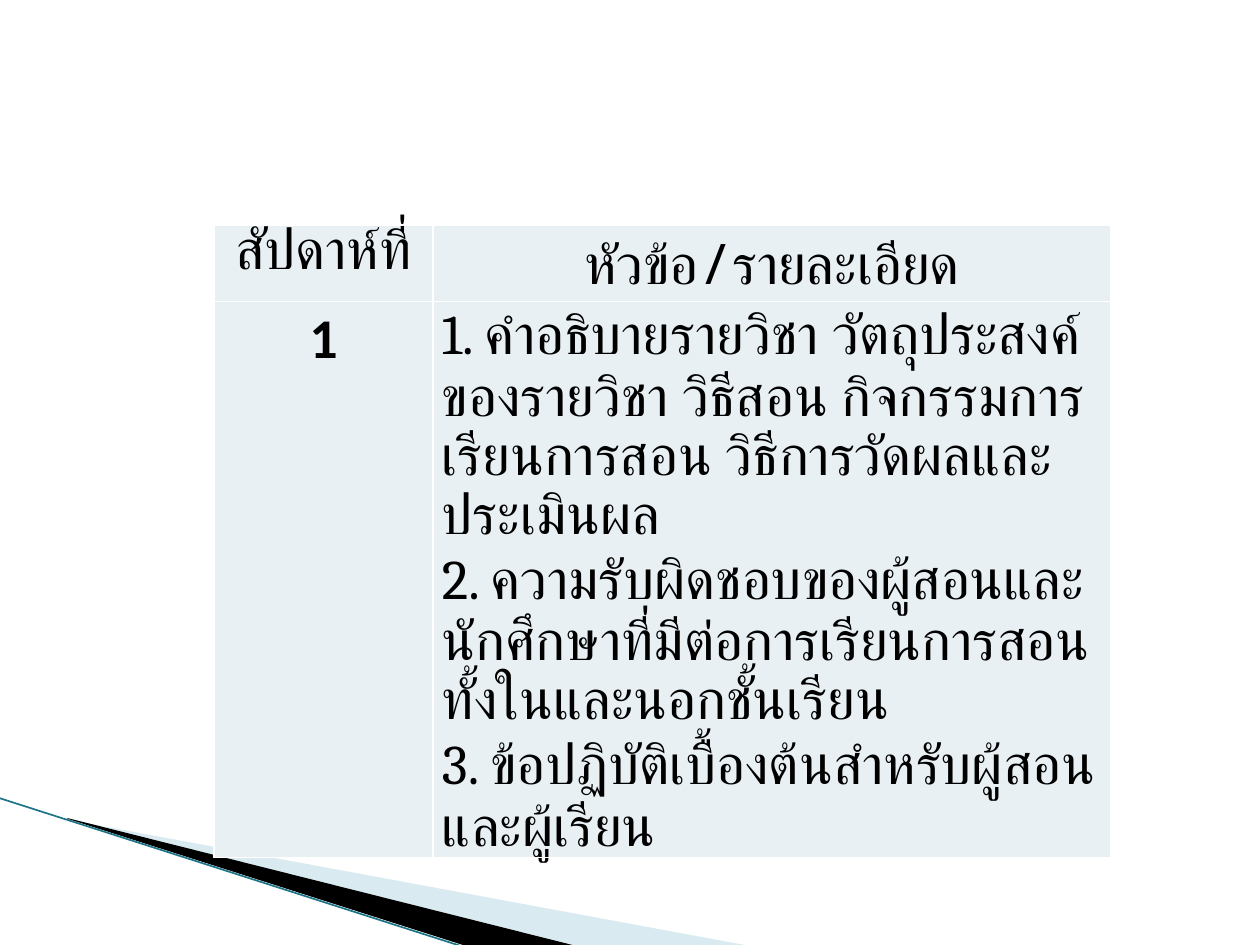
from lxml import etree
from pptx import Presentation, util as u
from pptx.dml.color import RGBColor
from pptx.enum import shapes, text
from pptx.oxml.ns import qn

SCALE = 914400 / 126  # EMU per px

HEADINGS = ["สัปดาห์ที่", "หัวข้อ/รายละเอียด"]
WEEK = ["1"]
TOPICS = [
    "1. คำอธิบายรายวิชา วัตถุประสงค์ของรายวิชา วิธีสอน กิจกรรมการเรียนการสอน วิธีการวัดผลและประเมินผล",
    "2. ความรับผิดชอบของผู้สอนและนักศึกษาที่มีต่อการเรียนการสอนทั้งในและนอกชั้นเรียน",
    "3. ข้อปฏิบัติเบื้องต้นสำหรับผู้สอนและผู้เรียน",
]


def px(value):
    return u.Emu(round(value * SCALE))


def rgb(value):
    return RGBColor.from_string(value)


def add_wedge(slide, points, color, opacity=100):
    builder = slide.shapes.build_freeform(*points[0], scale=SCALE)
    builder.add_line_segments(points[1:], close=True)
    shape = builder.convert_to_shape()
    shape.shadow.inherit = False
    shape.fill.solid()
    shape.fill.fore_color.rgb = rgb(color)
    shape.line.fill.background()
    if opacity < 100:
        fill = shape._element.spPr.find(qn("a:solidFill"))
        etree.SubElement(fill[0], qn("a:alpha"), val=str(opacity * 1000))


def add_line(slide, start, end, color, width):
    line = slide.shapes.add_connector(
        shapes.MSO_CONNECTOR.STRAIGHT, *map(px, start + end))
    line.line.color.rgb = rgb(color)
    line.line.width = u.Pt(width)
    etree.SubElement(line._element.spPr, qn("a:effectLst"))


def add_borders(cell, color, width):
    properties = cell._tc.get_or_add_tcPr()
    for index, side in enumerate(("lnL", "lnR", "lnT", "lnB")):
        border = etree.Element(qn("a:" + side), w=str(u.Pt(width)))
        fill = etree.SubElement(border, qn("a:solidFill"))
        etree.SubElement(fill, qn("a:srgbClr"), val=color)
        properties.insert(index, border)


def fill_cell(cell, lines, font, centered=True, bold=False, spacing=None, after=0):
    cell.margin_left = cell.margin_right = px(9)
    cell.margin_top = cell.margin_bottom = 0
    cell.fill.solid()
    cell.fill.fore_color.rgb = rgb("E8F0F4")
    add_borders(cell, "FFFFFF", 1)
    frame = cell.text_frame
    for index, line in enumerate(lines):
        paragraph = frame.add_paragraph() if index else frame.paragraphs[0]
        paragraph.text = line
        paragraph.alignment = text.PP_ALIGN.CENTER if centered else text.PP_ALIGN.LEFT
        paragraph.line_spacing = spacing
        paragraph.space_after = u.Pt(after)
        paragraph.font.name = font
        paragraph.font.size = u.Pt(32)
        paragraph.font.bold = bold
        paragraph.font.color.rgb = rgb("000000")


def add_schedule(slide):
    table = slide.shapes.add_table(2, 2, px(214), px(225), px(897), px(631)).table
    table.first_row = table.horz_banding = False
    for column, width in zip(table.columns, (219, 678)):
        column.width = px(width)
    for row, height in zip(table.rows, (75, 556)):
        row.height = px(height)
    for column, heading in enumerate(HEADINGS):
        fill_cell(table.cell(0, column), [heading], "Noto Sans Mono")
    fill_cell(table.cell(1, 0), WEEK, "Calibri", bold=True, spacing=1.05, after=10)
    fill_cell(table.cell(1, 1), TOPICS, "Cambria", centered=False, spacing=1.05)


def main():
    presentation = Presentation()
    presentation.slide_width, presentation.slide_height = px(1260), px(945)
    slide = presentation.slides.add_slide(presentation.slide_layouts[6])

    # Corner decoration
    add_wedge(slide, [(69, 820), (750, 946), (575, 946), (69, 819)], "A0CBDC", 40)
    add_wedge(slide, [(67, 818), (576, 946), (469, 947), (68, 819)], "000000")
    add_line(slide, (-1, 798), (467, 948), "1B7587", 0.95)

    # Weekly schedule
    add_schedule(slide)
    presentation.save("out.pptx")


if __name__ == "__main__":
    main()
